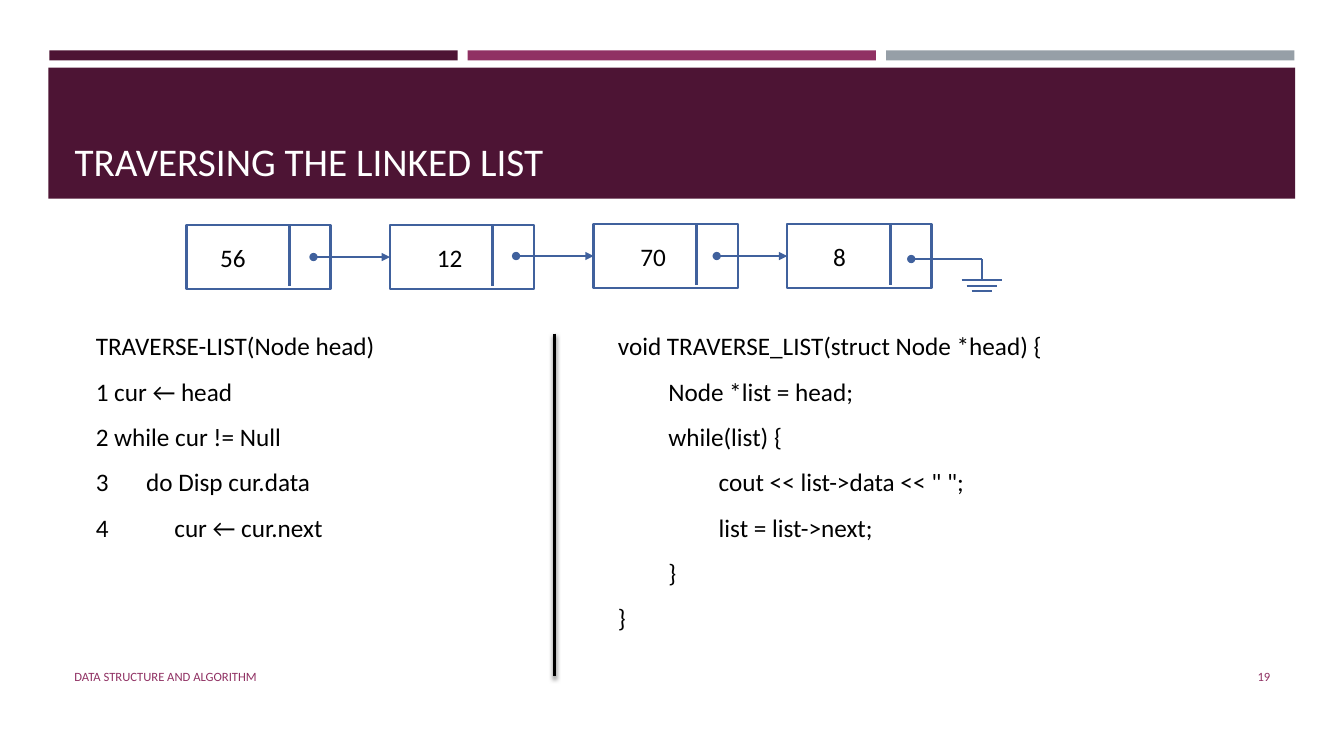
from dataclasses import dataclass

from lxml import etree
from pptx import Presentation
from pptx import util as u
from pptx.dml.color import RGBColor
from pptx.enum import shapes as kinds, text as t
from pptx.oxml import ns

# Grid: one column and one row are a tenth of an inch
CELL = 0.1
COLUMNS, ROWS = 133.33, 75
FONT = "Calibri"
COLORS = {
    "plum": "4D1434", "magenta": "903163", "gray": "969FA7",
    "blue": "40619D", "white": "FFFFFF", "black": "000000",
}
NODE_WIDTH, NODE_HEIGHT = 14.3, 6.4
LINK_OFFSET = 10.2  # from a node's left side to its link cell
LEVEL = 5  # columns per indent level


@dataclass
class Node:
    value: str
    left: float
    top: float
    center: float  # value's centre, from the node's left side
    dot: float  # column where the outgoing link starts


@dataclass
class CodeLine:
    text: str
    indent: float = 0
    hanging: bool = False


NODES = [
    Node("56", 18.5, 22.3, 4.6, 31.1),
    Node("12", 38.7, 22.3, 5.9, 51.2),
    Node("70", 58.9, 22.2, 5.9, 71.1),
    Node("8", 78.1, 22.2, 5.2, 90.4),
]
PSEUDOCODE = [
    CodeLine("TRAVERSE-LIST(Node head)"),
    CodeLine("1 cur ← head"),
    CodeLine("2 while cur != Null"),
    CodeLine("3\tdo Disp cur.data", LEVEL, True),
    CodeLine("4\tcur ← cur.next", 7.8, True),
]
CODE = [
    CodeLine("void TRAVERSE_LIST(struct Node *head) {"),
    CodeLine("Node *list = head;", LEVEL),
    CodeLine("while(list) {", LEVEL),
    CodeLine('cout << list->data << " ";', 2 * LEVEL),
    CodeLine("list = list->next;", 2 * LEVEL),
    CodeLine("}", LEVEL),
    CodeLine("}"),
]


def grid(cells: float) -> u.Length:
    return u.Inches(cells * CELL)


def color(name: str) -> RGBColor:
    return RGBColor.from_string(COLORS[name])


def place(shape, left: float, top: float, width: float, height: float) -> None:
    shape.left, shape.top = grid(left), grid(top)
    shape.width, shape.height = grid(width), grid(height)


def style(paragraph, size: float, font_color: str, align=t.PP_ALIGN.LEFT) -> None:
    paragraph.alignment = align
    font = paragraph.font
    font.name, font.size = FONT, u.Pt(size)
    font.color.rgb = color(font_color)


def add_rectangle(slide, left: float, top: float, width: float, height: float, fill: str):
    shape = slide.shapes.add_shape(
        kinds.MSO_SHAPE.RECTANGLE, grid(left), grid(top), grid(width), grid(height))
    shape.shadow.inherit = False
    shape.fill.solid()
    shape.fill.fore_color.rgb = color(fill)
    shape.line.fill.background()
    return shape


def add_band(slide, left: float, top: float, width: float, height: float, fill: str) -> None:
    """Add a decorative rectangle behind the placeholders."""
    band = add_rectangle(slide, left, top, width, height, fill)
    slide.shapes._spTree.insert(2, band._element)


def add_line(slide, x1: float, y1: float, x2: float, y2: float, width: float = 1.5,
             line_color: str = "blue", head: str = "", tail: str = ""):
    line = slide.shapes.add_connector(
        kinds.MSO_CONNECTOR.STRAIGHT, grid(x1), grid(y1), grid(x2), grid(y2))
    line.line.color.rgb = color(line_color)
    line.line.width = u.Pt(width)
    outline = line.line._get_or_add_ln()
    for tag, kind in (("a:headEnd", head), ("a:tailEnd", tail)):
        if kind:
            etree.SubElement(outline, ns.qn(tag), type=kind)
    etree.SubElement(line._element.spPr, ns.qn("a:effectLst"))
    return line


def add_shadow(line) -> None:
    effects = line._element.spPr.find(ns.qn("a:effectLst"))
    shadow = etree.SubElement(effects, ns.qn("a:outerShdw"), blurRad=str(u.Pt(3)),
                              dist=str(u.Pt(2)), dir="5400000", rotWithShape="0")
    shade = etree.SubElement(shadow, ns.qn("a:srgbClr"), val=COLORS["black"])
    etree.SubElement(shade, ns.qn("a:alpha"), val="55000")


def add_footer(slide, text: str, left: float, width: float, align) -> None:
    box = slide.shapes.add_textbox(grid(left), grid(65.1), grid(width), grid(4))
    frame = box.text_frame
    frame.word_wrap = True
    frame.vertical_anchor = t.MSO_ANCHOR.MIDDLE
    frame.text = text
    style(frame.paragraphs[0], 9, "magenta", align)


def fill_code(placeholder, lines: list[CodeLine]) -> None:
    frame = placeholder.text_frame
    frame.auto_size = t.MSO_AUTO_SIZE.SHAPE_TO_FIT_TEXT
    frame.text = "\n".join(line.text for line in lines)
    for paragraph, line in zip(frame.paragraphs, lines):
        style(paragraph, 18, "black")
        paragraph.line_spacing = 1.5
        paragraph.space_before = u.Pt(0)
        properties = paragraph._p.get_or_add_pPr()
        properties.set("marL", str(grid(line.indent)))
        properties.set("indent", str(-grid(line.indent) if line.hanging else 0))
        etree.SubElement(properties, ns.qn("a:buNone"))


def add_node(slide, node: Node):
    box = add_rectangle(slide, node.left, node.top, NODE_WIDTH, NODE_HEIGHT, "white")
    box.line.color.rgb = color("blue")
    box.line.width = u.Pt(1.75)
    frame = box.text_frame
    frame.margin_left = 0
    frame.margin_right = grid(NODE_WIDTH - 2 * node.center)
    frame.vertical_anchor = t.MSO_ANCHOR.MIDDLE
    frame.text = node.value
    style(frame.paragraphs[0], 18, "black", t.PP_ALIGN.CENTER)
    link = node.left + LINK_OFFSET
    add_line(slide, link, node.top + 0.1, link, node.top + 6.1, 2.25)
    return box


def main() -> None:
    presentation = Presentation()
    presentation.slide_width, presentation.slide_height = grid(COLUMNS), grid(ROWS)
    slide = presentation.slides.add_slide(presentation.slide_layouts[3])
    title, pseudocode, code = slide.placeholders

    # Header strips and title band
    for index, fill in enumerate(("plum", "magenta", "gray")):
        add_band(slide, 4.9 + 41.5 * index, 5, 40.5, 1, fill)
    add_band(slide, 4.8, 6.7, 123.7, 13, "plum")
    place(title, 6.4, 7.7, 120.6, 11.1)
    title.text_frame.text = "TRAVERSING THE LINKED LIST"
    title.text_frame.auto_size = t.MSO_AUTO_SIZE.NONE
    title.text_frame.vertical_anchor = t.MSO_ANCHOR.BOTTOM
    style(title.text_frame.paragraphs[0], 28, "white")

    # Pseudocode and code, with a divider between them
    place(pseudocode, 8.5, 30.8, 37.2, 23.7)
    fill_code(pseudocode, PSEUDOCODE)
    place(code, 60.3, 30.8, 66.7, 32.3)
    fill_code(code, CODE)
    add_shadow(add_line(slide, 55, 33.1, 55, 67.1, 2, "black"))

    # Linked list: nodes, then the arrows that join them
    boxes = [add_node(slide, node) for node in NODES]
    for node, target, box in zip(NODES, NODES[1:], boxes[1:]):
        middle = target.top + NODE_HEIGHT / 2
        arrow = add_line(slide, node.dot, middle, target.left, middle,
                         head="oval", tail="triangle")
        arrow.end_connect(box, 1)

    # Ground symbol that ends the list
    ground = 97.4
    add_line(slide, NODES[-1].dot, 25.7, ground, 25.7, head="oval")
    add_line(slide, ground, 25.7, ground, 27.7)
    for index in range(3):
        half, row = 2 - 0.5 * index, 27.8 + 0.55 * index
        add_line(slide, ground - half, row, ground + half, row)

    # Footer
    add_footer(slide, "DATA STRUCTURE AND ALGORITHM", 6.4, 75.6, t.PP_ALIGN.LEFT)
    add_footer(slide, "19", 115.5, 11.5, t.PP_ALIGN.RIGHT)

    presentation.save("out.pptx")


if __name__ == "__main__":
    main()
